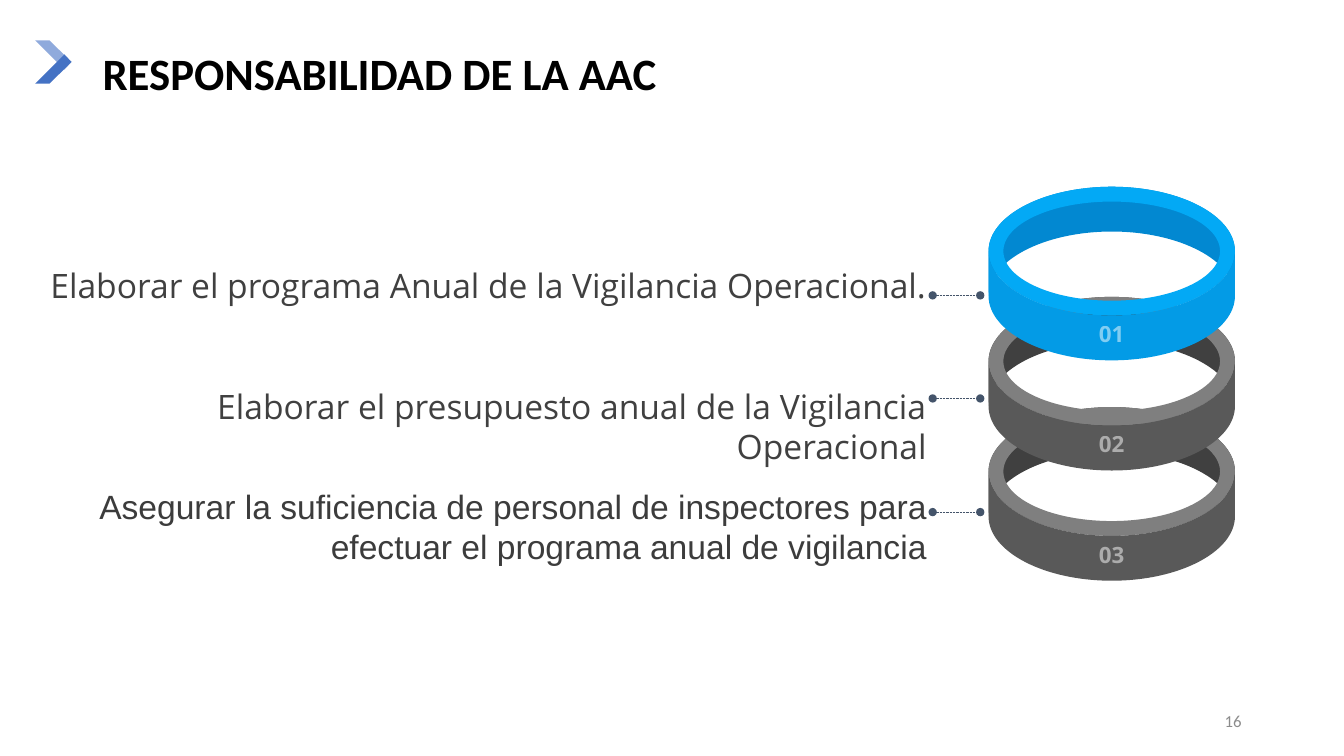
from lxml.etree import SubElement
from pptx import Presentation
from pptx.dml.color import RGBColor
from pptx.enum.dml import MSO_LINE
from pptx.enum.shapes import MSO_CONNECTOR, MSO_SHAPE
from pptx.enum.text import MSO_ANCHOR, MSO_AUTO_SIZE, PP_ALIGN
from pptx.oxml.ns import qn
from pptx.util import Pt

COLORS = {
    "title": "000000", "number": "8C8C8C", "body": "404040", "body_dark": "3C3C3C",
    "chevron_light": "8FAADC", "chevron_dark": "4472C4", "leader": "44546A", "white": "FFFFFF",
    "blue_back": "0288D1", "blue_rim": "03A9F5", "blue_front": "039BE6",
    "gray_back": "404040", "gray_rim": "7F7F7F", "gray_front": "595959",
}
RING_WIDTH, RIM_HEIGHT, BAND_HEIGHT = 176, 92, 32
RIM_THICKNESS = 10.6
STACK_BOX = (706.1, 133.4)
RING_PITCH = 78.7
ARC_HANDLE = 0.55  # Bezier handle length for a quarter of a unit circle

# label, text, font, color, box top, box height, leader height
ITEMS = [
    ("01", "Elaborar el programa Anual de la Vigilancia Operacional.",
     "Open Sans", "body", 185, 37.4, 211),
    ("02", "Elaborar el presupuesto anual de la Vigilancia Operacional",
     "Open Sans", "body", 271.4, 37.4, 284.6),
    ("03", "Asegurar la suficiencia de personal de inspectores para "
     "efectuar el programa anual de vigilancia",
     "Arial", "body_dark", 342.6, 66.2, 365.8),
]


def color(name):
    return RGBColor.from_string(COLORS[name])


def set_format(target, values):
    for name, value in values.items():
        setattr(target, name, value)


def paint(shape, fill):
    shape.shadow.inherit = False
    shape.fill.solid()
    shape.fill.fore_color.rgb = color(fill)
    shape.line.fill.background()


def add_polygon(slide, points, fill):
    corners = [(Pt(x), Pt(y)) for x, y in points]
    builder = slide.shapes.build_freeform(*corners[0], scale=1.0)
    builder.add_line_segments(corners[1:], close=True)
    shape = builder.convert_to_shape()
    paint(shape, fill)
    return shape


def bend_segments(shape, starts):
    """Turn each run of three straight segments into one Bezier curve."""
    segments = list(shape._element.iter(qn("a:lnTo")))
    for start in starts:
        curve = segments[start]
        curve.tag = qn("a:cubicBezTo")
        for segment in segments[start + 1:start + 3]:
            curve.append(segment[0])
            segment.getparent().remove(segment)


def add_text(slide, box, text, font, fill, align=PP_ALIGN.LEFT, anchor=MSO_ANCHOR.MIDDLE,
             margins=(7.2, 3.6), line_spacing=None, auto_size=MSO_AUTO_SIZE.NONE):
    frame = slide.shapes.add_textbox(*map(Pt, box)).text_frame
    side, edge = map(Pt, margins)
    set_format(frame, {
        "word_wrap": True, "auto_size": auto_size, "vertical_anchor": anchor,
        "margin_left": side, "margin_right": side, "margin_top": edge, "margin_bottom": edge,
    })
    paragraph = frame.paragraphs[0]
    set_format(paragraph, {"alignment": align, "line_spacing": line_spacing})
    run = paragraph.add_run()
    run.text = text
    set_format(run.font, font)
    run.font.color.rgb = color(fill)
    return run


def add_header(slide, box):
    left, top, width, height = box
    # Chevron: two mirrored halves around the tip
    center = top + 15.5
    for direction, fill in ((-1, "chevron_light"), (1, "chevron_dark")):
        offsets = [(0, 15.5), (20.9, -5.4), (25.9, 0), (10.1, 15.5)]
        add_polygon(slide, [(left + x, center + direction * y) for x, y in offsets], fill)
    # Title
    add_text(slide, (left + 41, top - 26.6, width - 41, height), "RESPONSABILIDAD DE LA AAC",
             {"name": "Calibri", "size": Pt(32), "bold": True}, "title", line_spacing=0.9)


def add_band(slide, left, top, direction, fill):
    """Wall between two parallel half ellipses: direction -1 is the back, 1 the front."""
    radius_x, radius_y = RING_WIDTH / 2, RIM_HEIGHT / 2
    half_ellipse = [(1, 0), (1, ARC_HANDLE), (ARC_HANDLE, 1), (0, 1),
                    (-ARC_HANDLE, 1), (-1, ARC_HANDLE), (-1, 0)]
    upper = [(left + radius_x * (1 + x), top + radius_y * (1 + direction * y))
             for x, y in half_ellipse]
    lower = [(x, y + BAND_HEIGHT) for x, y in reversed(upper)]
    band = add_polygon(slide, upper + lower, fill)
    bend_segments(band, (0, 3, 7, 10))


def add_ring(slide, left, top, label, scheme):
    add_band(slide, left, top, -1, scheme + "_back")
    rim = slide.shapes.add_shape(MSO_SHAPE.DONUT, Pt(left), Pt(top), Pt(RING_WIDTH), Pt(RIM_HEIGHT))
    rim.adjustments[0] = RIM_THICKNESS / RIM_HEIGHT
    paint(rim, scheme + "_rim")
    add_band(slide, left, top, 1, scheme + "_front")
    # Half-transparent number on the front wall
    run = add_text(slide, (left, top + 93, RING_WIDTH, 24), label,
                   {"name": "Open Sans", "size": Pt(16), "bold": True}, "white",
                   PP_ALIGN.CENTER, margins=(0, 0))
    tint = run.font.fill._xPr.find(qn("a:solidFill"))[0]
    SubElement(tint, qn("a:alpha"), val="50000")


def add_ring_stack(slide, box):
    left, top = box
    # The lowest ring lies at the back
    for index, item in reversed(list(enumerate(ITEMS))):
        add_ring(slide, left, top + index * RING_PITCH, item[0], "gray" if index else "blue")


def add_leader(slide, left, right, height):
    leader = slide.shapes.add_connector(
        MSO_CONNECTOR.STRAIGHT, Pt(right), Pt(height), Pt(left), Pt(height))
    set_format(leader.line, {"width": Pt(0.25), "dash_style": MSO_LINE.SQUARE_DOT})
    leader.line.color.rgb = color("leader")
    line = leader.line._get_or_add_ln()
    for end in ("a:headEnd", "a:tailEnd"):
        SubElement(line, qn(end), type="oval")
    SubElement(leader._element.spPr, qn("a:effectLst"))


def add_descriptions(slide, left, width):
    for _, text, font, fill, top, height, leader_height in ITEMS:
        add_text(slide, (left, top, width, height), text, {"name": font, "size": Pt(24)}, fill,
                 PP_ALIGN.RIGHT, MSO_ANCHOR.TOP, margins=(4.3, 4.3),
                 auto_size=MSO_AUTO_SIZE.SHAPE_TO_FIT_TEXT)
        add_leader(slide, left + width, left + width + 34, leader_height)


def main():
    presentation = Presentation()
    set_format(presentation, {"slide_width": Pt(960), "slide_height": Pt(540)})
    slide = presentation.slides.add_slide(presentation.slide_layouts[6])
    add_header(slide, (25.2, 28.8, 869, 104.4))
    add_ring_stack(slide, STACK_BOX)
    add_descriptions(slide, 31, 635.2)
    # Slide number
    add_text(slide, (678, 500.4, 216, 28.8), "16", {"name": "Calibri", "size": Pt(12)},
             "number", PP_ALIGN.RIGHT)
    presentation.save("out.pptx")


if __name__ == "__main__":
    main()
